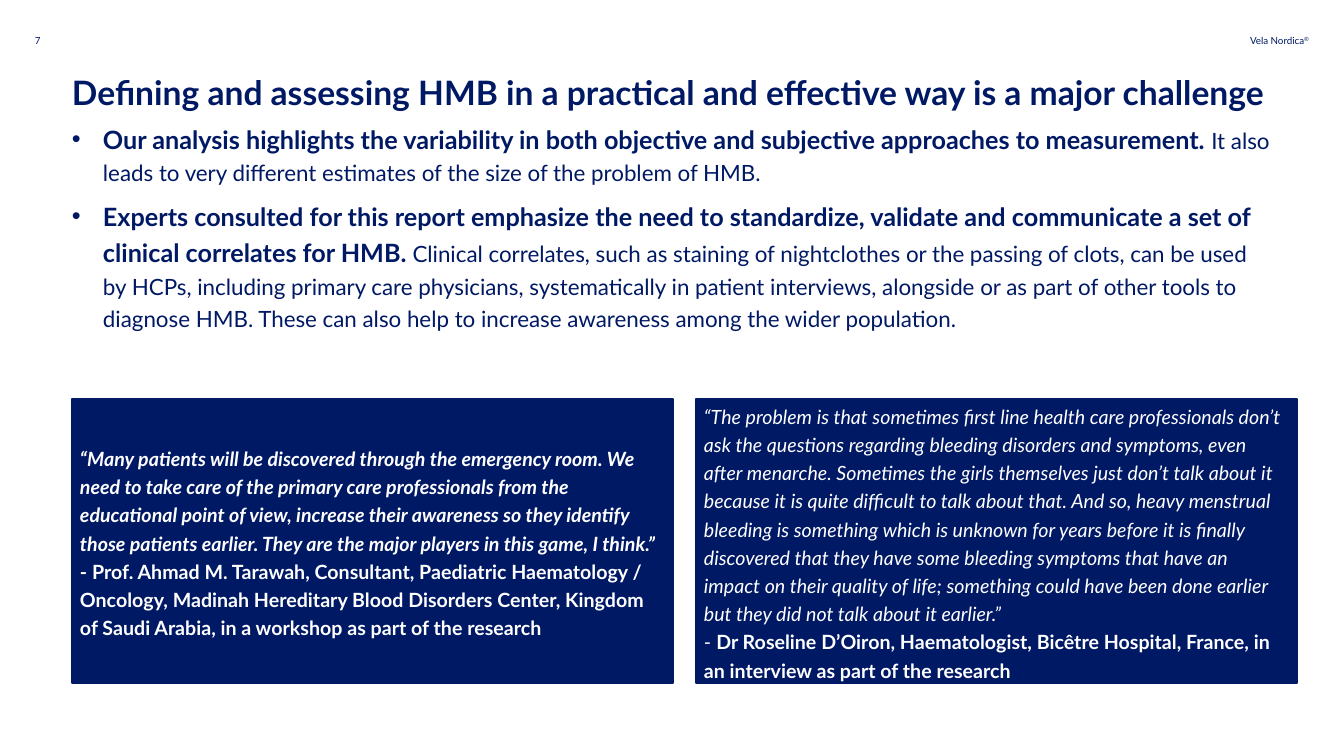
from pptx import Presentation
from pptx.dml.color import RGBColor
from pptx.enum.shapes import MSO_SHAPE
from pptx.enum.text import MSO_ANCHOR, MSO_AUTO_SIZE, PP_ALIGN
from pptx.oxml.xmlchemy import OxmlElement
from pptx.util import Emu, Pt

NAVY = RGBColor(0x00, 0x19, 0x65)
WHITE = RGBColor(0xFF, 0xFF, 0xFF)
FONT = "Lato"
PIXEL = 914400 / 100.8
BULLET_INDENT = 31
MARGIN = 72
CONTENT_WIDTH = 1201
QUOTE_TOP, QUOTE_WIDTH, QUOTE_HEIGHT, QUOTE_GAP = 399, 601, 284, 23

BULLETS = [
    [("Our analysis highlights the variability in both objective and subjective "
      "approaches to measurement. ", {"size": 18, "bold": True}),
     ("It also leads to very different estimates of the size of the problem of HMB.", {})],
    [("Experts consulted for this report emphasize the need to standardize, validate "
      "and communicate a set of clinical correlates for HMB.", {"size": 18, "bold": True}),
     (" Clinical correlates, such as staining of nightclothes or the passing of clots, "
      "can be used by HCPs, including primary care physicians, systematically in patient "
      "interviews, alongside or as part of other tools to diagnose HMB. These can also help "
      "to increase awareness among the wider population.", {})],
]
QUOTES = [
    [[("“Many patients will be discovered through the emergency room. We need to take care "
       "of the primary care professionals from the educational point of view, increase "
       "their awareness so they identify those patients earlier. They are the major players "
       "in this game, I think.”", {"bold": True, "italic": True})],
     [("- Prof. Ahmad M. Tarawah, Consultant, Paediatric Haematology / Oncology, Madinah "
       "Hereditary Blood Disorders Center, Kingdom of Saudi Arabia, in a workshop as part "
       "of the research", {"bold": True})]],
    [[("“The problem is that sometimes first line health care professionals don’t ask the "
       "questions regarding bleeding disorders and symptoms, even after menarche. Sometimes "
       "the girls themselves just don’t talk about it because it is quite difficult to talk "
       "about that. And so, heavy menstrual bleeding is something which is unknown for years "
       "before it is finally discovered that they have some bleeding symptoms that have an "
       "impact on their quality of life; something could have been done earlier but they did "
       "not talk about it earlier.”", {"italic": True})],
     [("- ", {}),
      ("Dr Roseline D’Oiron, Haematologist, Bicêtre Hospital, France, in an interview as "
       "part of the research", {"bold": True})]],
]


def px(length):
    return Emu(round(length * PIXEL))


def add_run(paragraph, text, size=16, color=NAVY, bold=False, italic=False, baseline=None):
    run = paragraph.add_run()
    run.text = text
    font = run.font
    font.name = FONT
    font.size = Pt(size)
    font.color.rgb = color
    font.bold = bold
    font.italic = italic
    if baseline:
        run._r.get_or_add_rPr().set("baseline", str(baseline * 1000))


def add_bullet(paragraph):
    properties = paragraph._p.get_or_add_pPr()
    properties.set("marL", str(px(BULLET_INDENT)))
    properties.set("indent", str(-px(BULLET_INDENT)))
    for tag, name, value in (("a:buFont", "typeface", "Arial"), ("a:buChar", "char", "•")):
        element = OxmlElement(tag)
        element.set(name, value)
        properties.append(element)


class SlideBuilder:
    def __init__(self, slide):
        self.slide = slide

    def place(self, shape, left, top, width, height):
        shape.left, shape.top = px(left), px(top)
        shape.width, shape.height = px(width), px(height)

    def fill_text(self, shape, paragraphs, align=PP_ALIGN.LEFT, anchor=MSO_ANCHOR.TOP,
                  insets=(0, 0), line_spacing=1.0, gap=0, bullets=False, **style):
        frame = shape.text_frame
        frame.word_wrap = True
        frame.auto_size = MSO_AUTO_SIZE.NONE
        frame.vertical_anchor = anchor
        frame.margin_left = frame.margin_right = px(insets[0])
        frame.margin_top = frame.margin_bottom = px(insets[1])
        for index, runs in enumerate(paragraphs):
            paragraph = frame.add_paragraph() if index else frame.paragraphs[0]
            paragraph.alignment = align
            paragraph.line_spacing = line_spacing
            paragraph.space_before = Pt(gap if index else 0)
            if bullets:
                add_bullet(paragraph)
            for text, changes in runs:
                add_run(paragraph, text, **{**style, **changes})

    def title(self, text, *box):
        shape = self.slide.shapes.title
        self.place(shape, *box)
        self.fill_text(shape, [[(text, {})]], size=24, bold=True)

    def bullet_list(self, paragraphs, *box):
        shape = self.slide.placeholders[1]
        self.place(shape, *box)
        self.fill_text(shape, paragraphs, line_spacing=1.2, gap=6, bullets=True)

    def label(self, runs, *box, align=PP_ALIGN.LEFT):
        shape = self.slide.shapes.add_textbox(*map(px, box))
        self.fill_text(shape, [runs], align=align, size=7)

    def quote(self, paragraphs, *box):
        shape = self.slide.shapes.add_shape(MSO_SHAPE.RECTANGLE, *map(px, box))
        shape.shadow.inherit = False
        shape.fill.solid()
        shape.fill.fore_color.rgb = NAVY
        shape.line.color.rgb = NAVY
        shape.line.width = Pt(1)
        self.fill_text(shape, paragraphs, anchor=MSO_ANCHOR.MIDDLE, insets=(8, 4),
                       line_spacing=1.2, size=14, color=WHITE)


def main():
    presentation = Presentation()
    presentation.slide_width, presentation.slide_height = px(1344), px(756)
    builder = SlideBuilder(presentation.slides.add_slide(presentation.slide_layouts[1]))
    builder.label([("Vela Nordica", {}), ("®", {"baseline": 30})], 1237, 35, 72, 12,
                  align=PP_ALIGN.RIGHT)
    builder.title("Defining and assessing HMB in a practical and effective way is a major challenge",
                  MARGIN, 72, CONTENT_WIDTH, 143)
    builder.label([("7", {})], 35, 35, 35, 14)
    builder.bullet_list(BULLETS, MARGIN, 118, CONTENT_WIDTH, 214)
    for column, paragraphs in enumerate(QUOTES):
        left = MARGIN + column * (QUOTE_WIDTH + QUOTE_GAP)
        builder.quote(paragraphs, left, QUOTE_TOP, QUOTE_WIDTH, QUOTE_HEIGHT)
    presentation.save("out.pptx")


if __name__ == "__main__":
    main()
